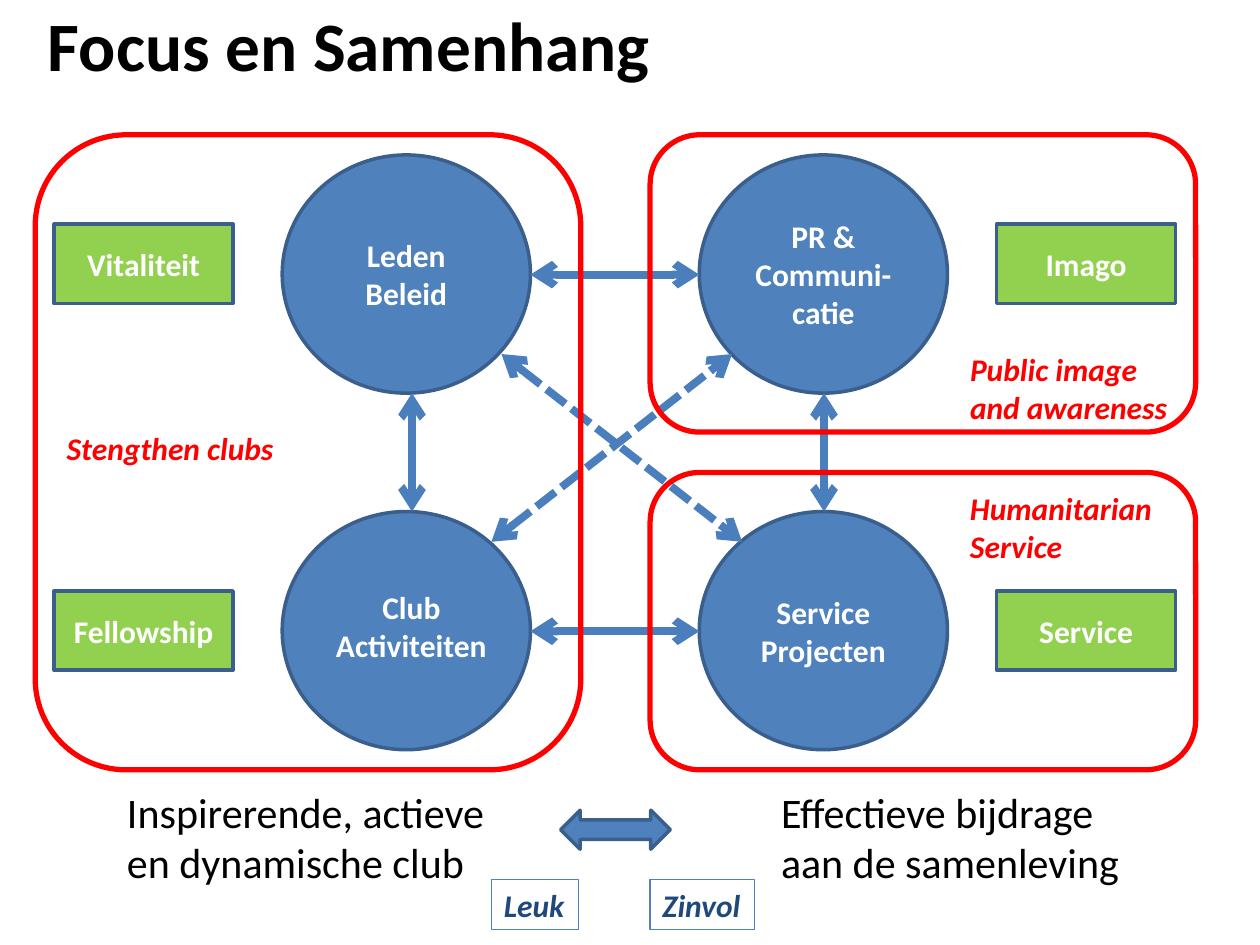
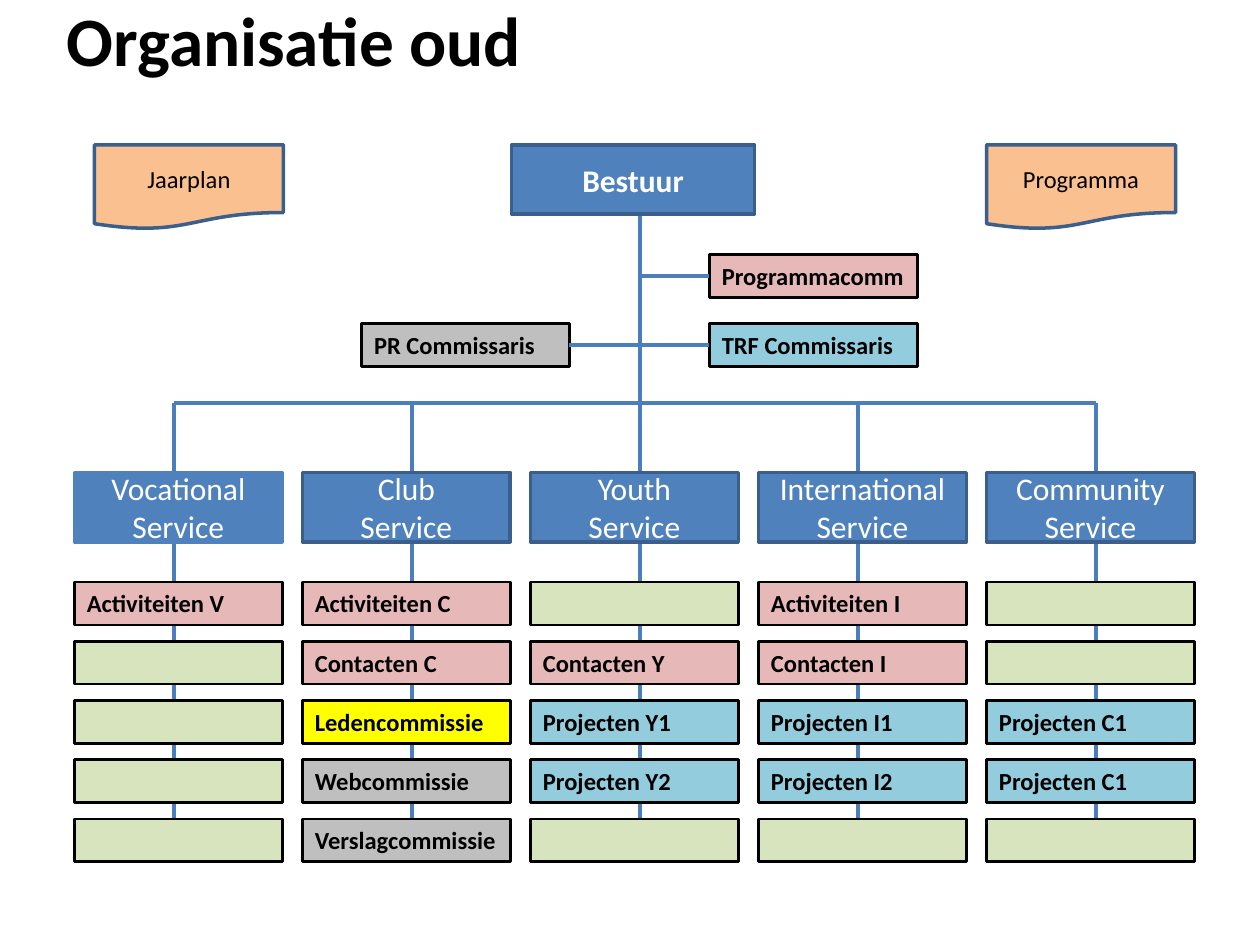
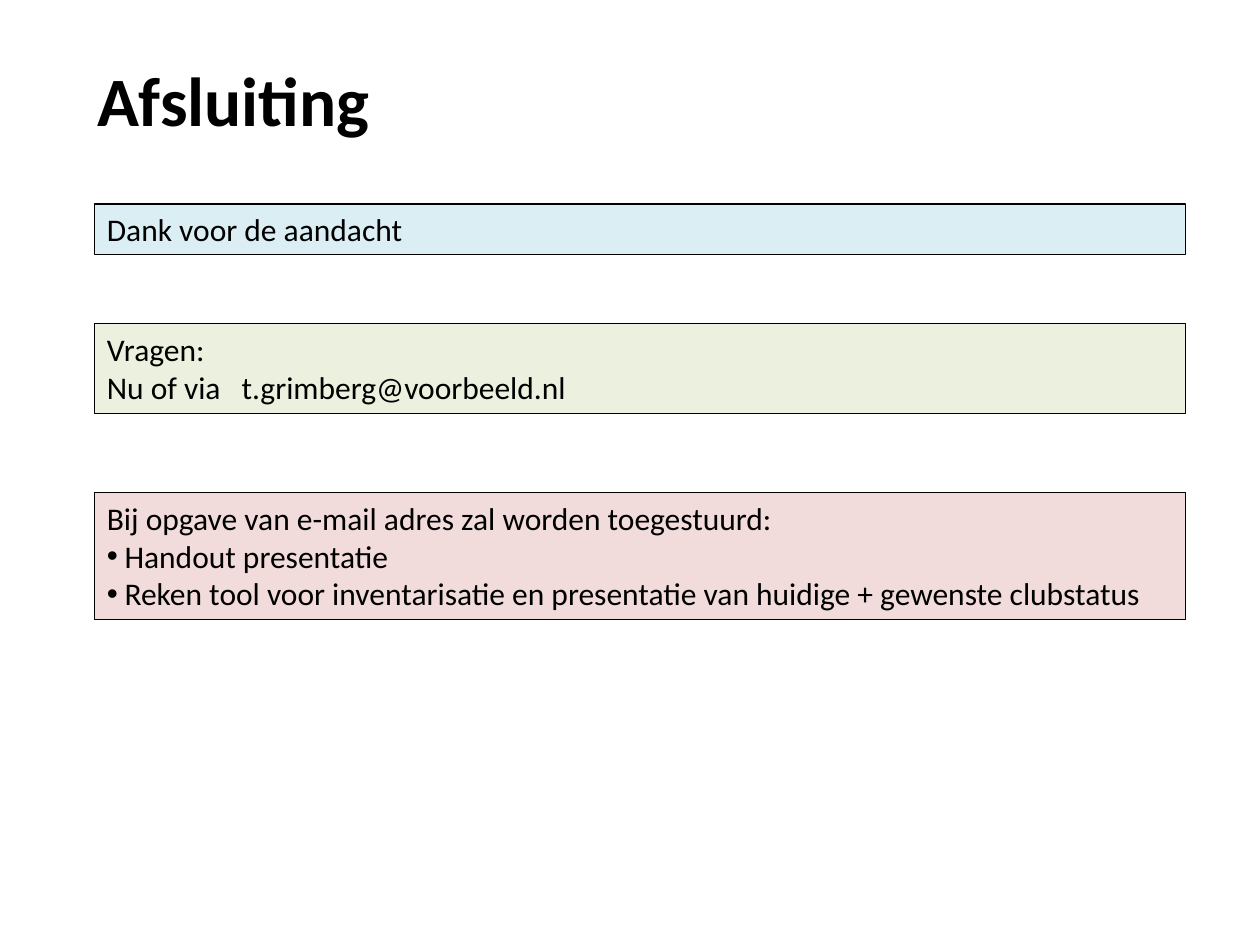
from dataclasses import dataclass

from lxml import etree
from pptx import Presentation
from pptx.dml.color import RGBColor
from pptx.enum.dml import MSO_LINE
from pptx.enum.shapes import MSO_CONNECTOR, MSO_SHAPE
from pptx.enum.text import MSO_ANCHOR, MSO_AUTO_SIZE, PP_ALIGN
from pptx.oxml.ns import qn
from pptx.util import Inches, Pt

RECT, ROUNDED, OVAL = MSO_SHAPE.RECTANGLE, MSO_SHAPE.ROUNDED_RECTANGLE, MSO_SHAPE.OVAL
DOCUMENT, DOUBLE_ARROW = MSO_SHAPE.FLOWCHART_DOCUMENT, MSO_SHAPE.LEFT_RIGHT_ARROW
STRAIGHT, SHORT_DASH = MSO_CONNECTOR.STRAIGHT, MSO_LINE.SQUARE_DOT
TOP, MIDDLE = MSO_ANCHOR.TOP, MSO_ANCHOR.MIDDLE
LEFT, CENTER = PP_ALIGN.LEFT, PP_ALIGN.CENTER
FIT_SHAPE, FIXED = MSO_AUTO_SIZE.SHAPE_TO_FIT_TEXT, MSO_AUTO_SIZE.NONE
LEFT_SIDE, RIGHT_SIDE = 1, 3
TITLE_ONLY = 5


@dataclass(frozen=True)
class Theme:
    """Colours, font and type sizes shared by all slides."""

    font: str = "Calibri"
    title_size: float = 39.6
    large: float = 24
    body: float = 18
    small: float = 14
    black: str = "000000"
    white: str = "FFFFFF"
    blue: str = "4F81BD"
    edge: str = "3A5F8C"
    link: str = "4B7EBC"
    navy: str = "1F497D"
    red: str = "FF0000"
    lime: str = "92D050"
    orange: str = "FAC090"
    sage: str = "D7E4BD"
    pink: str = "E6B9B8"
    grey: str = "BFBFBF"
    aqua: str = "93CDDD"
    yellow: str = "FFFF00"
    pale_blue: str = "DBEEF4"
    pale_green: str = "EBF1DE"
    pale_pink: str = "F2DCDB"


THEME = Theme()


def write(frame, text, size=THEME.body, color=THEME.black, bold=False, italic=False,
          align=LEFT, anchor=TOP, wrap=True, bullets_from=None, tab=None):
    """Fill a text frame, one paragraph for each line of text."""
    frame.word_wrap = wrap
    frame.auto_size = FIXED if wrap else FIT_SHAPE
    frame.vertical_anchor = anchor
    for index, line in enumerate(text.split("\n")):
        paragraph = frame.paragraphs[0] if index == 0 else frame.add_paragraph()
        paragraph.alignment = align
        properties = paragraph._p.get_or_add_pPr()
        if bullets_from is not None and index >= bullets_from:
            properties.set("marL", str(Inches(0.14)))
            properties.set("indent", str(-Inches(0.14)))
            etree.SubElement(properties, qn("a:buFont")).set("typeface", "Arial")
            etree.SubElement(properties, qn("a:buChar")).set("char", "•")
        if tab and "\t" in line:
            stops = etree.SubElement(properties, qn("a:tabLst"))
            stop = etree.SubElement(stops, qn("a:tab"))
            stop.set("pos", str(Inches(tab)))
            stop.set("algn", "l")
        run = paragraph.add_run()
        run.text = line
        run.font.name = THEME.font
        run.font.size = Pt(size)
        run.font.bold = bold
        run.font.italic = italic
        run.font.color.rgb = RGBColor.from_string(color)


def add_panel(slide, box, kind=RECT, fill=None, line=THEME.edge, width=2, text="", **style):
    """Draw a preset shape, with text when there is any."""
    panel = slide.shapes.add_shape(kind, *map(Inches, box))
    panel.shadow.inherit = False
    if fill:
        panel.fill.solid()
        panel.fill.fore_color.rgb = RGBColor.from_string(fill)
    else:
        panel.fill.background()
    panel.line.color.rgb = RGBColor.from_string(line)
    panel.line.width = Pt(width)
    if text:
        write(panel.text_frame, text, **style)
    return panel


def add_label(slide, box, text, **style):
    """Place free text that keeps its own line breaks."""
    label = slide.shapes.add_textbox(*map(Inches, box))
    write(label.text_frame, text, wrap=False, **style)


def add_link(slide, start, end, width=2.25, arrows=False, dash=None):
    """Draw a straight line between two points, with arrowheads on request."""
    link = slide.shapes.add_connector(STRAIGHT, *map(Inches, (*start, *end)))
    link.line.color.rgb = RGBColor.from_string(THEME.link)
    link.line.width = Pt(width)
    if dash:
        link.line.dash_style = dash
    properties = link._element.spPr
    if arrows:
        for name in ("a:headEnd", "a:tailEnd"):
            etree.SubElement(properties.find(qn("a:ln")), qn(name)).set("type", "arrow")
    etree.SubElement(properties, qn("a:effectLst"))
    return link


def add_titled_slide(deck, title, box):
    """Add a slide and set its title in the shared style."""
    slide = deck.slides.add_slide(deck.slide_layouts[TITLE_ONLY])
    heading = slide.shapes.title
    heading.left, heading.top, heading.width, heading.height = map(Inches, box)
    write(heading.text_frame, title, size=THEME.title_size, bold=True, anchor=MIDDLE)
    return slide


def draw_cycle(slide, left, top):
    """Draw four linked circles and the goal beside each one."""
    white_bold = dict(color=THEME.white, bold=True, align=CENTER)
    themes = (("Leden\nBeleid", "PR &\nCommuni- catie"), ("", "Service Projecten"))
    goals = (("Vitaliteit", "Imago"), ("Fellowship", "Service"))
    for row in range(2):
        for column in range(2):
            add_panel(slide, (left + 1.81 + 3.31 * column, top + 2.83 * row, 1.97, 1.89), OVAL,
                      THEME.blue, text=themes[row][column], anchor=MIDDLE, **white_bold)
            add_panel(slide, (left + 7.48 * column, top + 0.55 + 2.91 * row, 1.42, 0.63),
                      fill=THEME.lime, text=goals[row][column], anchor=MIDDLE, **white_bold)
        y = top + 0.95 + 2.83 * row
        add_link(slide, (left + 3.78, y), (left + 5.12, y), 4.5, True)
    add_label(slide, (left + 2.13, top + 3.39, 1.41, 0.71), "Club\nActiviteiten", **white_bold)
    for x in (left + 2.84, left + 6.11):
        add_link(slide, (x, top + 2.83), (x, top + 1.89), 4.5, True)
    upper, lower = top + 1.58, top + 3.07
    add_link(slide, (left + 3.55, upper), (left + 5.46, lower), 4.5, True, SHORT_DASH)
    add_link(slide, (left + 3.47, lower), (left + 5.38, upper), 4.5, True, SHORT_DASH)


def draw_area(slide, box, caption, caption_box):
    """Frame an area in red, with its caption placed from the frame's corner."""
    add_panel(slide, box, ROUNDED, line=THEME.red, width=3)
    dx, dy, width, height = caption_box
    add_label(slide, (box[0] + dx, box[1] + dy, width, height), caption,
              color=THEME.red, bold=True, italic=True)


def draw_results(slide, left, top):
    """Set the two outcomes and their key words around a double arrow."""
    add_label(slide, (left, top, 3.07, 0.91), "Inspirerende, actieve\nen dynamische club",
              size=THEME.large)
    add_label(slide, (left + 5.19, top, 2.91, 0.91), "Effectieve bijdrage\naan de samenleving",
              size=THEME.large)
    add_panel(slide, (left + 3.54, top + 0.24, 0.87, 0.31), DOUBLE_ARROW, THEME.blue)
    for word, dx, width in (("Leuk", 2.99, 0.69), ("Zinvol", 4.25, 0.83)):
        add_panel(slide, (left + dx, top + 0.79, width, 0.4), line=THEME.blue, width=0.75,
                  text=word, color=THEME.navy, bold=True, italic=True, wrap=False)


def build_focus(deck):
    """Build the slide on focus and coherence."""
    slide = add_titled_slide(deck, "Focus en Samenhang", (0.28, 0, 6.54, 0.69))
    draw_cycle(slide, 0.43, 1.23)
    draw_area(slide, (0.28, 1.07, 4.33, 5.04), "Stengthen clubs", (0.15, 2.29, 1.86, 0.4))
    draw_area(slide, (5.16, 1.07, 4.33, 2.36), "Public image\nand awareness",
              (2.44, 1.66, 1.79, 0.71))
    draw_area(slide, (5.16, 3.75, 4.33, 2.36), "Humanitarian\nService",
              (2.44, 0.08, 1.7, 0.71))
    draw_results(slide, 0.91, 6.19)


def add_committee(slide, left, top, name="", fill=THEME.sage):
    """Draw one committee box."""
    return add_panel(slide, (left, top, 1.65, 0.34), fill=fill, line=THEME.black, width=1.5,
                     text=name, size=THEME.small, bold=True)


def draw_board(slide, left, top):
    """Draw the board, its plans and the officers who report to it."""
    for name, dx in (("Jaarplan", 0), ("Programma", 7.08)):
        add_panel(slide, (left + dx, top, 1.5, 0.67), DOCUMENT, THEME.orange, text=name,
                  size=THEME.small, align=CENTER, anchor=MIDDLE)
    add_panel(slide, (left + 3.31, top, 1.93, 0.55), fill=THEME.blue, text="Bestuur",
              color=THEME.white, bold=True, align=CENTER, anchor=MIDDLE)
    programme = add_committee(slide, left + 4.88, top + 0.87, "Programmacomm", THEME.pink)
    publicity = add_committee(slide, left + 2.12, top + 1.42, "PR Commissaris", THEME.grey)
    foundation = add_committee(slide, left + 4.88, top + 1.42, "TRF Commissaris", THEME.aqua)
    branch_y = top + 1.04
    branch = add_link(slide, (left + 4.33, branch_y), (left + 4.88, branch_y))
    branch.end_connect(programme, LEFT_SIDE)
    officers_y = top + 1.59
    officers = add_link(slide, (left + 3.77, officers_y), (left + 4.88, officers_y))
    officers.begin_connect(publicity, RIGHT_SIDE)
    officers.end_connect(foundation, LEFT_SIDE)


def draw_services(slide, left, top, trunk_top):
    """Draw the five services, their committees and the tree behind them."""
    pink, aqua, grey = THEME.pink, THEME.aqua, THEME.grey
    empty = ("", THEME.sage)
    services = (
        ("Vocational\nService", 0.79, THEME.blue,
         (("Activiteiten V", pink), empty, empty, empty, empty)),
        ("Club\nService", 2.68, THEME.edge,
         (("Activiteiten C", pink), ("Contacten C", pink), ("Ledencommissie", THEME.yellow),
          ("Webcommissie", grey), ("Verslagcommissie", grey))),
        ("Youth\nService", 4.49, THEME.edge,
         (empty, ("Contacten Y", pink), ("Projecten Y1", aqua), ("Projecten Y2", aqua), empty)),
        ("International Service", 6.22, THEME.edge,
         (("Activiteiten I", pink), ("Contacten I", pink), ("Projecten I1", aqua),
          ("Projecten I2", aqua), empty)),
        ("Community Service", 8.11, THEME.edge,
         (empty, empty, ("Projecten C1", aqua), ("Projecten C1", aqua), empty)),
    )
    bar_y = top - 0.55
    add_link(slide, (left + services[0][1], bar_y), (left + services[-1][1], bar_y))
    for column, (service, stem, edge, committees) in enumerate(services):
        stem_top = trunk_top if column == 2 else bar_y
        add_link(slide, (left + stem, stem_top), (left + stem, top + 2.91))
        x = left + 1.81 * column
        add_panel(slide, (x, top, 1.65, 0.55), fill=THEME.blue, line=edge, text=service,
                  color=THEME.white, align=CENTER, anchor=MIDDLE)
        for row, (name, fill) in enumerate(committees):
            add_committee(slide, x, top + 0.87 + 0.47 * row, name, fill)


def build_organisation(deck):
    """Build the organisation chart slide."""
    slide = add_titled_slide(deck, "Organisatie oud", (0.43, 0, 9.38, 0.61))
    draw_services(slide, 0.59, 3.75, 1.7)
    draw_board(slide, 0.75, 1.15)


def draw_messages(slide, left, top, width):
    """Stack the closing messages in tinted bars."""
    messages = (
        (0, 0.4, THEME.pale_blue, "Dank voor de aandacht", {}),
        (0.95, 0.71, THEME.pale_green, "Vragen:\nNu of via\tt.grimberg@voorbeeld.nl",
         dict(tab=1.07)),
        (2.29, 1.01, THEME.pale_pink,
         "Bij opgave van e-mail adres zal worden toegestuurd:\nHandout presentatie\n"
         "Reken tool voor inventarisatie en presentatie van huidige + gewenste clubstatus",
         dict(bullets_from=1)),
    )
    for dy, height, fill, text, style in messages:
        add_panel(slide, (left, top + dy, width, height), fill=fill, line=THEME.black,
                  width=0.75, text=text, **style)


def build_closing(deck):
    """Build the closing slide."""
    slide = add_titled_slide(deck, "Afsluiting", (0.67, 0.44, 9.06, 0.69))
    draw_messages(slide, 0.75, 1.62, 8.66)


def main():
    """Build the deck and save it."""
    deck = Presentation()
    deck.slide_width, deck.slide_height = Inches(10), Inches(7.5)
    build_focus(deck)
    build_organisation(deck)
    build_closing(deck)
    deck.save("out.pptx")


if __name__ == "__main__":
    main()
